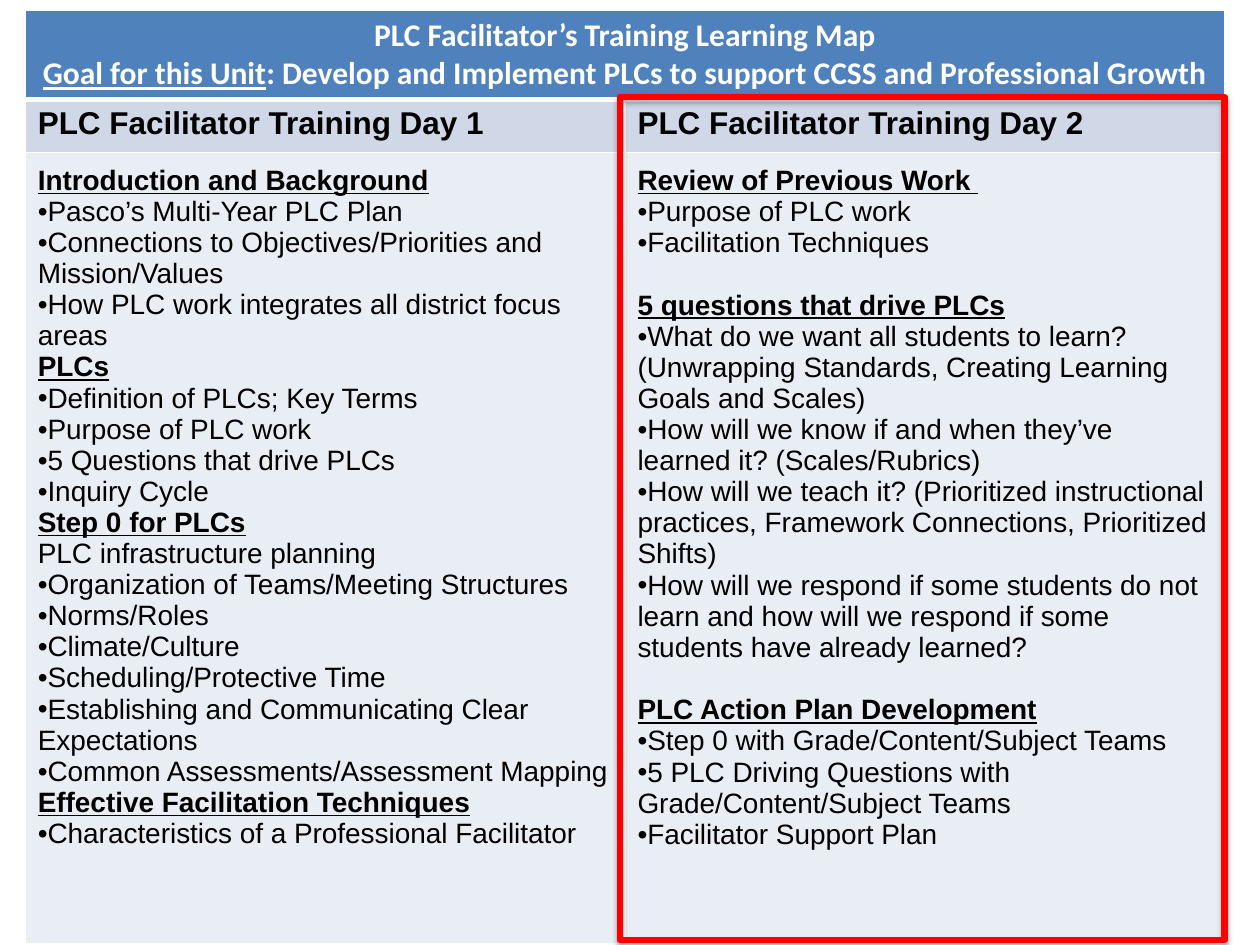
from pptx import Presentation
from pptx.dml.color import RGBColor
from pptx.enum.shapes import MSO_SHAPE
from pptx.enum.text import PP_ALIGN
from pptx.oxml import parse_xml
from pptx.oxml.ns import nsdecls
from pptx.util import Inches, Pt

RECTANGLE = MSO_SHAPE.RECTANGLE
LEFT, CENTER = PP_ALIGN.LEFT, PP_ALIGN.CENTER

WHITE = RGBColor(0xFF, 0xFF, 0xFF)
BLACK = RGBColor(0, 0, 0)
RED = RGBColor(0xFF, 0, 0)
TITLE_BLUE = RGBColor(0x4F, 0x81, 0xBD)
HEADING_BLUE = RGBColor(0xD0, 0xD8, 0xE8)
BODY_BLUE = RGBColor(0xE9, 0xED, 0xF4)

# Each section: heading, plain lines, bulleted lines
DAY_1 = [
    ("Introduction and Background", [], [
        "Pasco’s Multi-Year PLC Plan",
        "Connections to Objectives/Priorities and Mission/Values",
        "How PLC work integrates all district focus areas"]),
    ("PLCs", [], [
        "Definition of PLCs; Key Terms",
        "Purpose of PLC work",
        "5 Questions that drive PLCs",
        "Inquiry Cycle"]),
    ("Step 0 for PLCs", ["PLC infrastructure planning"], [
        "Organization of Teams/Meeting Structures",
        "Norms/Roles",
        "Climate/Culture",
        "Scheduling/Protective Time",
        "Establishing and Communicating Clear Expectations",
        "Common Assessments/Assessment Mapping"]),
    ("Effective Facilitation Techniques", [], [
        "Characteristics of a Professional Facilitator"]),
]
DAY_2 = [
    ("Review of Previous Work ", [], [
        "Purpose of PLC work",
        "Facilitation Techniques"]),
    ("5 questions that drive PLCs", [], [
        "What do we want all students to learn? (Unwrapping Standards, "
        "Creating Learning Goals and Scales)",
        "How will we know if and when they’ve learned it? (Scales/Rubrics)",
        "How will we teach it? (Prioritized instructional practices, "
        "Framework Connections, Prioritized Shifts)",
        "How will we respond if some students do not learn and how will we "
        "respond if some students have already learned?"]),
    ("PLC Action Plan Development", [], [
        "Step 0 with Grade/Content/Subject Teams",
        "5 PLC Driving Questions with Grade/Content/Subject Teams",
        "Facilitator Support Plan"]),
]


class SlideBuilder:
    heading_size = 18
    body_size = 16
    title_font = "Calibri"
    body_font = "Arial"

    def __init__(self, slide):
        self.slide = slide

    def table(self, left, top, column_widths, row_heights):
        frame = self.slide.shapes.add_table(
            len(row_heights), len(column_widths), Inches(left), Inches(top),
            Inches(sum(column_widths)), Inches(sum(row_heights)))
        table = frame.table
        for column, width in zip(table.columns, column_widths):
            column.width = Inches(width)
        for row, height in zip(table.rows, row_heights):
            row.height = Inches(height)
        return table

    def style_cell(self, cell, fill, top_border=1, bottom_border=1):
        properties = cell._tc.get_or_add_tcPr()
        borders = (("L", 1), ("R", 1), ("T", top_border), ("B", bottom_border))
        for side, width in borders:
            properties.append(parse_xml(
                f'<a:ln{side} {nsdecls("a")} w="{Pt(width)}"><a:solidFill>'
                f'<a:srgbClr val="{WHITE}"/></a:solidFill></a:ln{side}>'))
        cell.fill.solid()
        cell.fill.fore_color.rgb = fill

    def paragraph(self, cell, align=LEFT, bullet=False, space_before=0):
        """Return the cell's first paragraph while it is empty, else a new one."""
        text_frame = cell.text_frame
        paragraph = text_frame.paragraphs[0]
        if paragraph.runs:
            paragraph = text_frame.add_paragraph()
        if bullet:
            properties = paragraph._p.get_or_add_pPr()
            properties.set("marL", "0")
            properties.set("indent", "0")
            properties.append(parse_xml(
                f'<a:buFont {nsdecls("a")} typeface="{self.body_font}"/>'))
            properties.append(parse_xml(f'<a:buChar {nsdecls("a")} char="•"/>'))
        paragraph.alignment = align
        paragraph.space_before = Pt(space_before)
        return paragraph

    def run(self, paragraph, text, size, font=body_font, color=BLACK,
            bold=False, underline=False):
        run = paragraph.add_run()
        run.text = text
        run.font.name = font
        run.font.size = Pt(size)
        run.font.color.rgb = color
        run.font.bold = bold
        run.font.underline = underline

    def title_line(self, cell, *parts):
        """Add a centred line made of (text, underline) parts."""
        paragraph = self.paragraph(cell, CENTER)
        for text, underline in parts:
            self.run(paragraph, text, self.heading_size, self.title_font,
                     WHITE, True, underline)

    def agenda(self, cell, sections, gap):
        cell.margin_left = cell.margin_right = Inches(0.1)
        cell.margin_top = cell.margin_bottom = Inches(0.1)
        for index, (heading, plain_lines, bullet_lines) in enumerate(sections):
            paragraph = self.paragraph(cell, space_before=gap if index else 0)
            self.run(paragraph, heading, self.body_size, bold=True, underline=True)
            for line in plain_lines:
                self.run(self.paragraph(cell), line, self.body_size)
            for line in bullet_lines:
                self.run(self.paragraph(cell, bullet=True), line, self.body_size)

    def highlight(self, left, top, width, height):
        shape = self.slide.shapes.add_shape(
            RECTANGLE, Inches(left), Inches(top), Inches(width), Inches(height))
        shape.fill.background()
        shape.line.color.rgb = RED
        shape.line.width = Pt(3.75)
        shape.shadow.inherit = False
        effects = shape._element.spPr.find(
            "{http://schemas.openxmlformats.org/drawingml/2006/main}effectLst")
        effects.append(parse_xml(
            f'<a:outerShdw {nsdecls("a")} blurRad="{Pt(3.1)}" dist="{Pt(1.8)}" '
            f'dir="5400000" rotWithShape="0"><a:srgbClr val="{BLACK}">'
            '<a:alpha val="35000"/></a:srgbClr></a:outerShdw>'))


def main():
    presentation = Presentation()
    presentation.slide_width = Inches(10)
    presentation.slide_height = Inches(7.5)
    slide = presentation.slides.add_slide(presentation.slide_layouts[6])
    builder = SlideBuilder(slide)

    table = builder.table(0.2, 0.08, [4.76, 4.76], [0.69, 0.42, 6.28])
    title = table.cell(0, 0)
    title.merge(table.cell(0, 1))
    builder.title_line(title, ("PLC Facilitator’s Training Learning Map", False))
    builder.title_line(
        title, ("Goal for this Unit", True),
        (": Develop and Implement PLCs to support CCSS and Professional Growth",
         False))

    for column, (sections, gap) in enumerate([(DAY_1, 0), (DAY_2, 18)]):
        heading, body = table.cell(1, column), table.cell(2, column)
        builder.style_cell(table.cell(0, column), TITLE_BLUE, bottom_border=3)
        builder.style_cell(heading, HEADING_BLUE, top_border=3)
        builder.style_cell(body, BODY_BLUE)
        builder.run(builder.paragraph(heading),
                    f"PLC Facilitator Training Day {column + 1}",
                    builder.heading_size, bold=True)
        builder.agenda(body, sections, gap)

    builder.highlight(4.92, 0.77, 4.8, 6.69)
    presentation.save("out.pptx")


if __name__ == "__main__":
    main()
